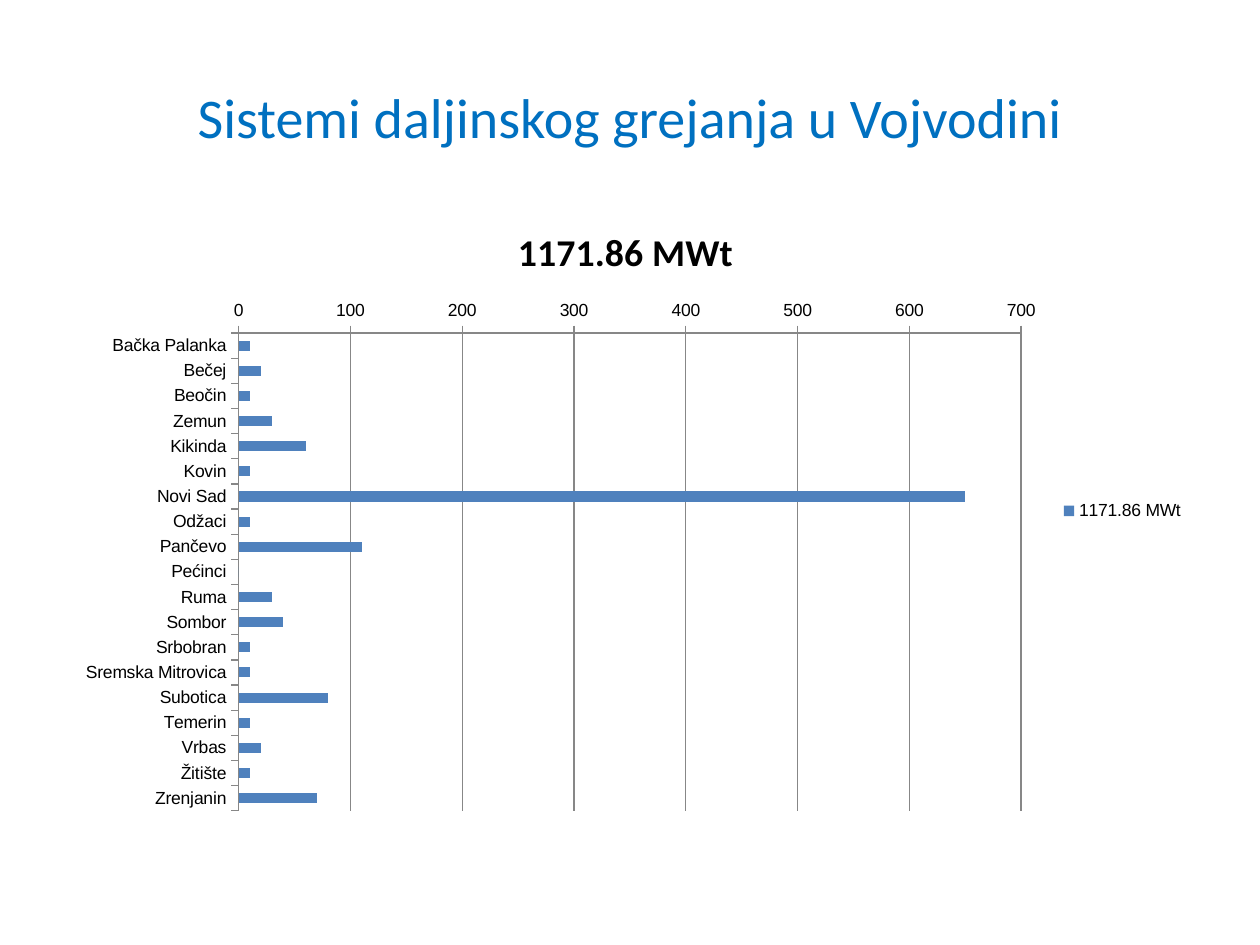
from dataclasses import dataclass

from lxml import etree
from pptx import Presentation
from pptx.chart.data import CategoryChartData
from pptx.dml.color import RGBColor
from pptx.enum.chart import XL_CHART_TYPE, XL_LEGEND_POSITION, XL_TICK_MARK
from pptx.enum.text import MSO_ANCHOR, PP_ALIGN
from pptx.oxml.ns import qn
from pptx.util import Inches, Pt

BAR_CLUSTERED = XL_CHART_TYPE.BAR_CLUSTERED
LEGEND_RIGHT = XL_LEGEND_POSITION.RIGHT
TICK_OUTSIDE, TICK_NONE = XL_TICK_MARK.OUTSIDE, XL_TICK_MARK.NONE
MIDDLE, CENTER = MSO_ANCHOR.MIDDLE, PP_ALIGN.CENTER

WIDTH, HEIGHT = Inches(10), Inches(7.5)
COLORS = {"heading": "0070C0", "text": "000000", "bar": "4F81BD",
          "line": "878787", "plot": "FFFFFF"}


@dataclass(frozen=True)
class Area:
    """A rectangle given as shares of its surroundings."""
    left: float
    top: float
    width: float
    height: float

    def on_slide(self) -> tuple[int, int, int, int]:
        return (int(self.left * WIDTH), int(self.top * HEIGHT),
                int(self.width * WIDTH), int(self.height * HEIGHT))


@dataclass(frozen=True)
class HeatingSystem:
    town: str
    megawatts: int


TITLE_AREA = Area(0.05, 0.04, 0.9, 1 / 6)
CHART_AREA = Area(0.05, 1.58 / 7.5, 0.9, 0.66)
PLOT_AREA = Area(0.155, 0.215, 0.69, 0.766)

SYSTEMS = [HeatingSystem(*entry) for entry in (
    ("Bačka Palanka", 10), ("Bečej", 20), ("Beočin", 10), ("Zemun", 30),
    ("Kikinda", 60), ("Kovin", 10), ("Novi Sad", 650), ("Odžaci", 10),
    ("Pančevo", 110), ("Pećinci", 0), ("Ruma", 30), ("Sombor", 40),
    ("Srbobran", 10), ("Sremska Mitrovica", 10), ("Subotica", 80),
    ("Temerin", 10), ("Vrbas", 20), ("Žitište", 10), ("Zrenjanin", 70))]
TOTAL = "1171.86 MWt"


def color(name: str) -> RGBColor:
    return RGBColor.from_string(COLORS[name])


def format_font(font, *, name: str, size: float, tint: str, bold: bool = False) -> None:
    font.name, font.size, font.bold = name, Pt(size), bold
    font.color.rgb = color(tint)


def write_text(frame, text: str, **style) -> None:
    para = frame.paragraphs[0]
    para.alignment = CENTER
    span = para.add_run()
    span.text = text
    format_font(span.font, **style)


def format_line(line) -> None:
    line.color.rgb = color("line")
    line.width = Pt(0.75)


def format_axis(axis) -> None:
    axis.major_tick_mark, axis.minor_tick_mark = TICK_OUTSIDE, TICK_NONE
    format_line(axis.format.line)


def place_plot(chart, area: Area) -> None:
    """Fix the inner plot area and fill it."""
    plot_area = chart.plots[0]._element.getparent()
    for old in plot_area.findall(qn("c:layout")):
        plot_area.remove(old)
    layout = etree.Element(qn("c:layout"))
    plot_area.insert(0, layout)
    manual = etree.SubElement(layout, qn("c:manualLayout"))
    settings = {"layoutTarget": "inner", "xMode": "edge", "yMode": "edge",
                "x": area.left, "y": area.top, "w": area.width, "h": area.height}
    for tag, value in settings.items():
        etree.SubElement(manual, qn(f"c:{tag}")).set("val", str(value))
    properties = etree.SubElement(plot_area, qn("c:spPr"))
    fill = etree.SubElement(properties, qn("a:solidFill"))
    etree.SubElement(fill, qn("a:srgbClr")).set("val", COLORS["plot"])


def add_heating_chart(page) -> None:
    data = CategoryChartData()
    data.categories = [system.town for system in SYSTEMS]
    data.add_series(TOTAL, [system.megawatts for system in SYSTEMS])
    chart = page.shapes.add_chart(BAR_CLUSTERED, *CHART_AREA.on_slide(), data).chart
    format_font(chart.font, name="Arial", size=10, tint="text")

    # Title and legend
    write_text(chart.chart_title.text_frame, f"{TOTAL} ",
               name="Calibri", size=21.6, tint="text", bold=True)
    chart.has_legend = True
    chart.legend.position = LEGEND_RIGHT
    chart.legend.include_in_layout = False

    # Axes, with the first town on top
    format_axis(chart.category_axis)
    chart.category_axis.reverse_order = True
    values = chart.value_axis
    format_axis(values)
    values.minimum_scale, values.maximum_scale, values.major_unit = 0, 700, 100
    values.has_major_gridlines = True
    format_line(values.major_gridlines.format.line)

    # Bars
    plot = chart.plots[0]
    plot.gap_width, plot.vary_by_categories = 150, False
    bars = plot.series[0].format.fill
    bars.solid()
    bars.fore_color.rgb = color("bar")
    place_plot(chart, PLOT_AREA)


def main() -> None:
    deck = Presentation()
    deck.slide_width, deck.slide_height = WIDTH, HEIGHT
    page = deck.slides.add_slide(deck.slide_layouts[5])

    # Heading
    heading = page.shapes.title
    heading.left, heading.top, heading.width, heading.height = TITLE_AREA.on_slide()
    heading.text_frame.vertical_anchor = MIDDLE
    write_text(heading.text_frame, "Sistemi daljinskog grejanja u Vojvodini",
               name="Calibri", size=32, tint="heading")

    add_heating_chart(page)
    deck.save("out.pptx")


if __name__ == "__main__":
    main()
